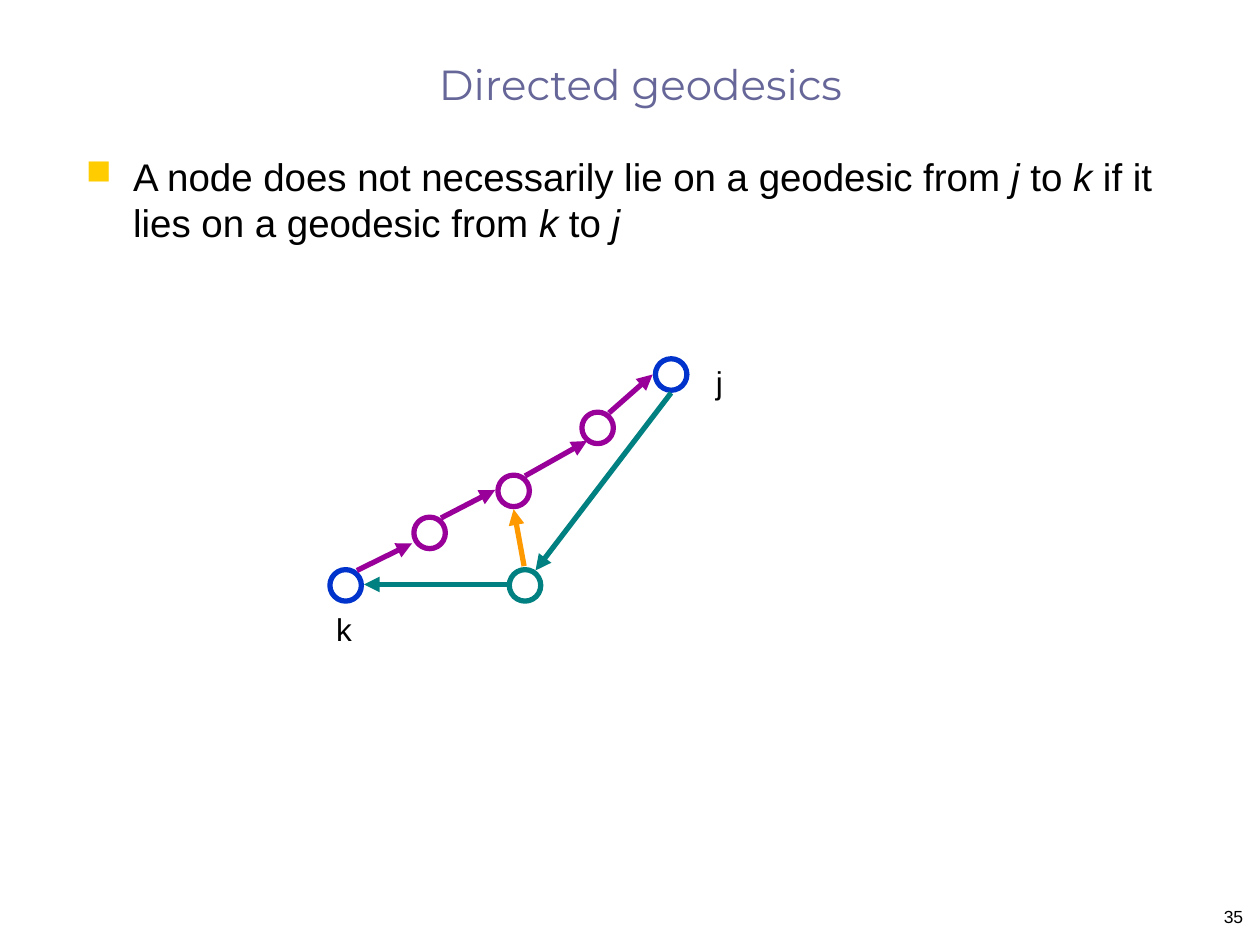
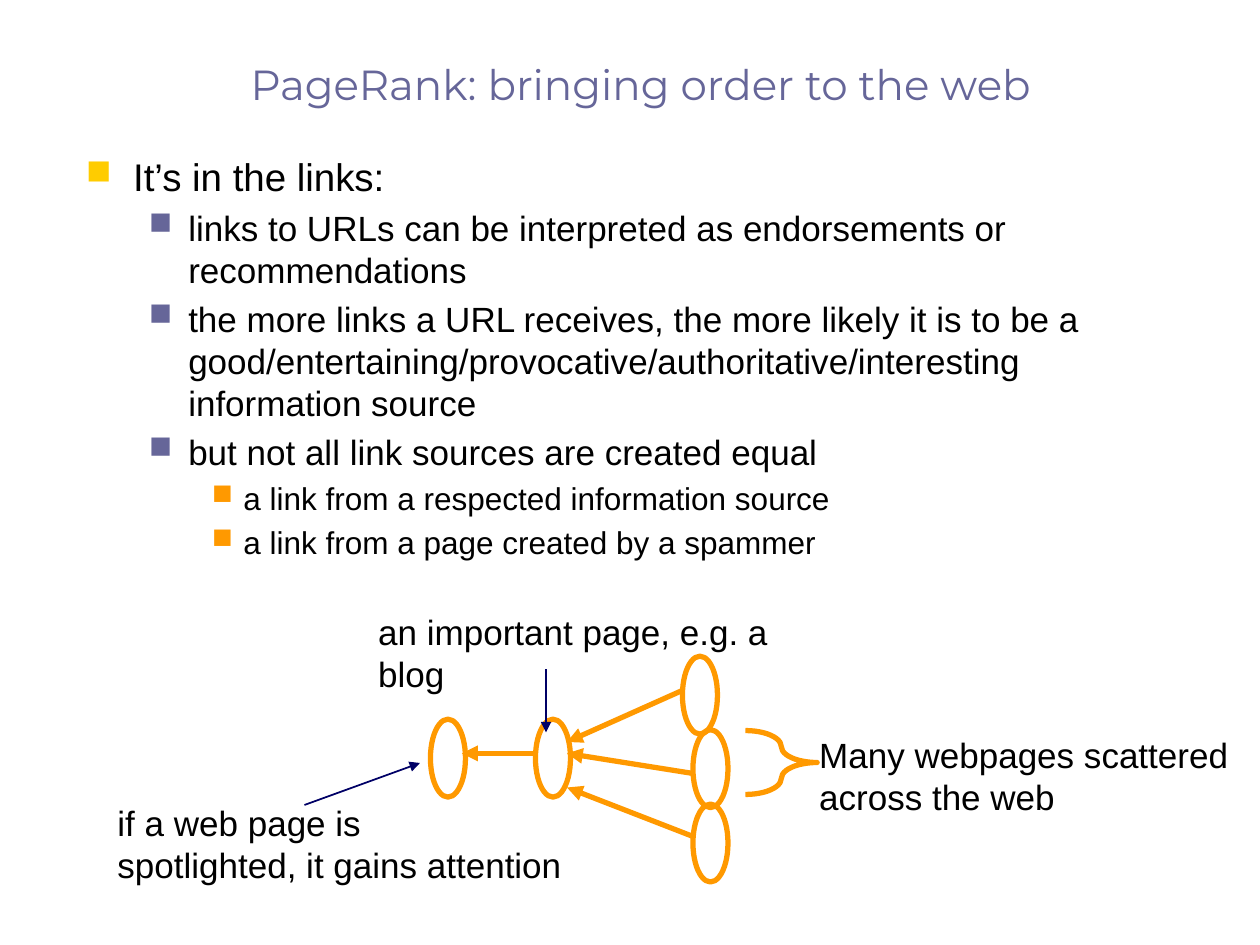
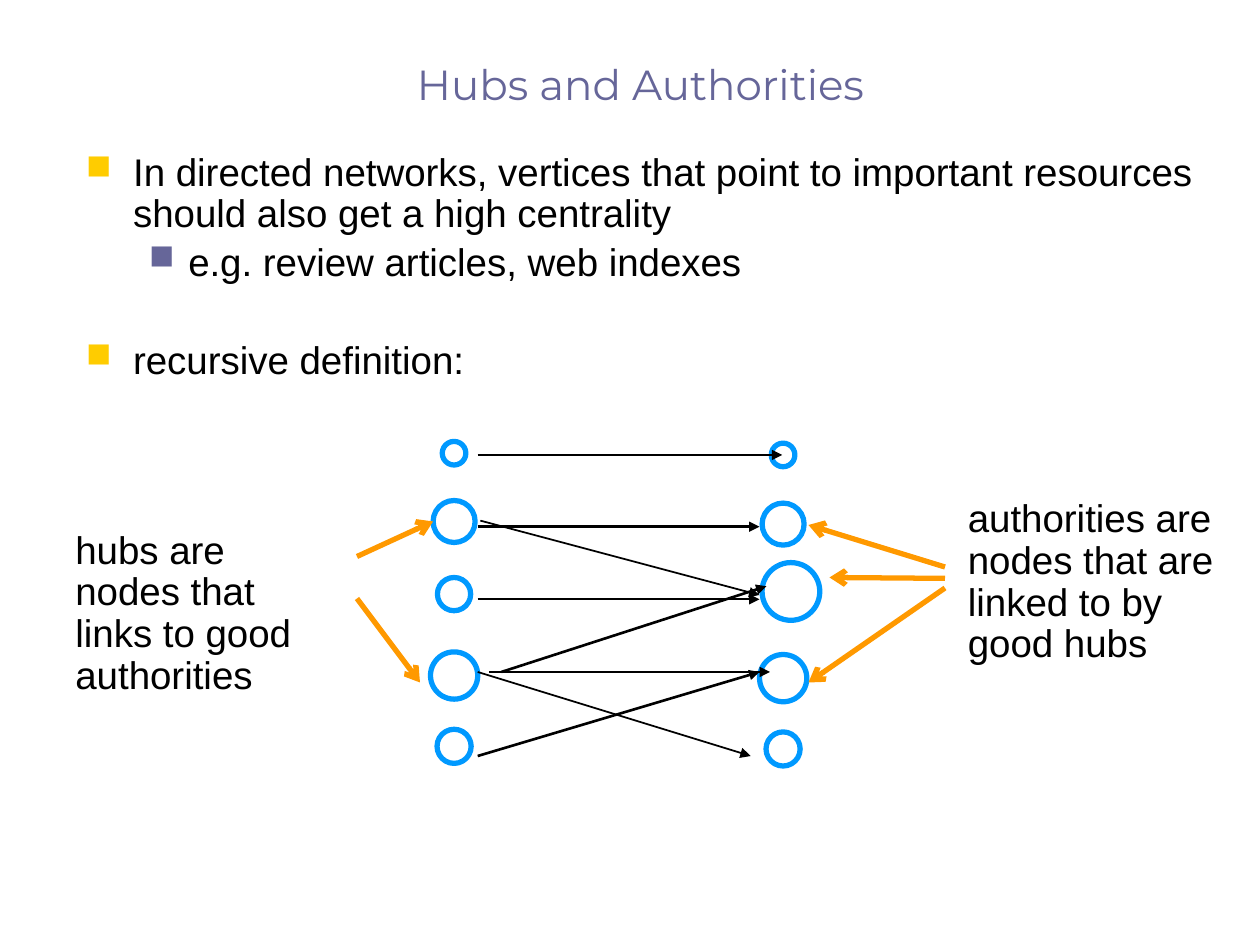
from dataclasses import dataclass

from lxml.etree import SubElement
from pptx import Presentation
from pptx.dml.color import RGBColor
from pptx.enum.shapes import MSO_CONNECTOR, MSO_SHAPE
from pptx.enum.text import MSO_ANCHOR, MSO_AUTO_SIZE, PP_ALIGN
from pptx.oxml.ns import qn
from pptx.util import Pt


@dataclass(frozen=True)
class Theme:
    black: str = "000000"
    lavender: str = "666699"
    yellow: str = "FFCC00"
    orange: str = "FF9900"
    purple: str = "990099"
    teal: str = "008080"
    blue: str = "0033CC"
    sky: str = "0099FF"
    navy: str = "000066"
    body_font: str = "Arial"
    title_font: str = "Montserrat"
    title: float = 24
    large: float = 22
    medium: float = 20
    small: float = 18
    tiny: float = 10
    thick: float = 3
    middle: float = 1.5
    thin: float = 1


THEME = Theme()
LEVELS = (
    (27, -27, THEME.yellow, THEME.large),
    (58.5, -22.5, THEME.lavender, THEME.medium),
    (90, -18, THEME.orange, THEME.small),
)


def add_bullet(paragraph, margin, indent, color):
    properties = paragraph._p.get_or_add_pPr()
    properties.set("marL", str(Pt(margin)))
    properties.set("indent", str(Pt(indent)))
    bullet_color = SubElement(properties, qn("a:buClr"))
    SubElement(bullet_color, qn("a:srgbClr"), val=color)
    SubElement(properties, qn("a:buSzPct"), val="90000")
    SubElement(properties, qn("a:buChar"), char="■")


def write(paragraph, text, size=THEME.large, color=THEME.black, font=THEME.body_font,
          align=PP_ALIGN.LEFT, before=0, spacing=None):
    paragraph.alignment = align
    paragraph.space_before = Pt(before)
    if spacing:
        paragraph.line_spacing = spacing
    for position, part in enumerate(text.split("*")):
        for row, line in enumerate(part.split("\n")):
            if row:
                paragraph.add_line_break()
            run = paragraph.add_run()
            run.text = line
            run.font.name = font
            run.font.size = Pt(size)
            run.font.italic = position % 2 == 1
            run.font.color.rgb = RGBColor.from_string(color)


class Deck:
    def __init__(self, theme):
        self.theme = theme
        self.presentation = Presentation()
        self.presentation.slide_width = Pt(720)
        self.presentation.slide_height = Pt(540)

    def new_slide(self, title):
        self.slide = self.presentation.slides.add_slide(self.presentation.slide_layouts[6])
        heading = self.frame(42, 24, 648, 41.5)
        heading.vertical_anchor = MSO_ANCHOR.BOTTOM
        write(heading.paragraphs[0], title, size=self.theme.title, color=self.theme.lavender,
              font=self.theme.title_font, align=PP_ALIGN.CENTER)

    def frame(self, left, top, width, height, wrap=True):
        frame = self.slide.shapes.add_textbox(Pt(left), Pt(top), Pt(width), Pt(height)).text_frame
        frame.word_wrap = wrap
        return frame

    def bullets(self, items, height=396, spacing=None):
        body = self.frame(42, 84, 648, height)
        for number, (level, text, changes) in enumerate(items):
            paragraph = body.add_paragraph() if number else body.paragraphs[0]
            margin, indent, color, size = LEVELS[level]
            paragraph.level = level
            add_bullet(paragraph, margin, indent, color)
            style = {"size": size, "before": 0.2 * size if number else 0, "spacing": spacing}
            write(paragraph, text, **(style | changes))

    def label(self, box, *lines, wrap=False, margin=0, **style):
        frame = self.frame(*box, wrap=wrap)
        frame.auto_size = MSO_AUTO_SIZE.SHAPE_TO_FIT_TEXT
        for number, line in enumerate(lines):
            paragraph = frame.add_paragraph() if number else frame.paragraphs[0]
            if margin:
                paragraph._p.get_or_add_pPr().set("marL", str(Pt(margin)))
            write(paragraph, line, **style)

    def page_number(self, number):
        write(self.frame(687.5, 514, 30, 24).paragraphs[0], number,
              size=self.theme.tiny, align=PP_ALIGN.RIGHT)

    def outline(self, left, top, width, height, color, kind=MSO_SHAPE.OVAL):
        shape = self.slide.shapes.add_shape(kind, Pt(left), Pt(top), Pt(width), Pt(height))
        shape.shadow.inherit = False
        shape.fill.background()
        shape.line.color.rgb = RGBColor.from_string(color)
        shape.line.width = Pt(self.theme.thick)
        return shape

    def node(self, x, y, diameter, color):
        self.outline(x - diameter / 2, y - diameter / 2, diameter, diameter, color)

    def arrow(self, x1, y1, x2, y2, color, width=THEME.thick, head="triangle"):
        link = self.slide.shapes.add_connector(
            MSO_CONNECTOR.STRAIGHT, Pt(x1), Pt(y1), Pt(x2), Pt(y2))
        link.line.color.rgb = RGBColor.from_string(color)
        link.line.width = Pt(width)
        SubElement(link.line._get_or_add_ln(), qn("a:tailEnd"), type=head)
        SubElement(link._element.spPr, qn("a:effectLst"))


def geodesics(deck):
    theme = deck.theme
    deck.new_slide("Directed geodesics")
    deck.bullets([(0, "A node does not necessarily lie on a geodesic from *j* to *k* "
                      "if it lies on a geodesic from *k* to *j*", {})], height=78)
    for x, y, color in (
        (293.5, 280.5, theme.purple), (341.5, 244.5, theme.purple),
        (245.5, 304.5, theme.purple), (300, 334.5, theme.teal),
        (197.5, 334.5, theme.blue), (383.5, 214, theme.blue),
    ):
        deck.node(x, y, 18, color)
    for ends, color in (
        ((204, 326, 235.5, 310.5), theme.purple),
        ((252, 296, 283, 280), theme.purple),
        ((300, 272, 335.5, 252), theme.purple),
        ((348, 236, 373, 214), theme.purple),
        ((299.5, 323.5, 293.5, 291), theme.orange),
        ((383.5, 224.5, 306, 326), theme.teal),
        ((289.5, 334, 208, 334), theme.teal),
    ):
        deck.arrow(*ends, color)
    deck.label((185, 345, 24, 29), "k", size=theme.small)
    deck.label((402, 204, 19, 29), "j", size=theme.small)
    deck.page_number("35")


def pagerank(deck):
    theme = deck.theme
    deck.new_slide("PageRank: bringing order to the web")
    deck.bullets([
        (0, "It’s in the links:", {}),
        (1, "links to URLs can be interpreted as endorsements or recommendations", {}),
        (1, "the more links a URL receives, the more likely it is to be a "
            "good/entertaining/provocative/authoritative/interesting information source", {}),
        (1, "but not all link sources are created equal", {}),
        (2, "a link from a respected information source", {}),
        (2, "a link from a page created by a spammer", {}),
    ])
    for left, top in ((306, 411), (396, 459.5), (390, 375), (396, 417), (246, 411)):
        deck.outline(left, top, 20, 44.5, theme.orange)
    for ends in ((306, 430.5, 264, 430.5), (390, 394.5, 324, 424),
                 (396, 442, 324, 430.5), (396, 478, 324, 450)):
        deck.arrow(*ends, theme.orange)
    brace = deck.outline(426, 417.5, 41, 36.5, theme.orange, MSO_SHAPE.RIGHT_BRACE)
    brace.adjustments[0] = 0.3
    for ends in ((312, 382.5, 312, 418.5), (174, 460, 240, 436)):
        deck.arrow(*ends, theme.navy, theme.thin)
    deck.label((461, 415.5, 250, 55.5), "Many webpages scattered", "across the web",
               size=theme.medium)
    deck.label((209, 345.5, 278, 31.5), "an important page, e.g. a blog", size=theme.medium)
    deck.label((60, 454.5, 276, 55.5), "if a web page is\nspotlighted, it gains attention",
               size=theme.medium)


def hubs_and_authorities(deck):
    theme = deck.theme
    deck.new_slide("Hubs and Authorities")
    deck.bullets([
        (0, "In directed networks, vertices that point to important resources "
            "should also get a high centrality", {}),
        (1, "e.g. review articles, web indexes", {"size": theme.large}),
        (0, "recursive definition:", {"before": 32}),
    ], spacing=0.9)
    hubs = ((259, 13.5), (298, 24), (339.5, 19), (386, 27), (426.5, 19.5))
    for y, diameter in hubs:
        deck.node(259.5, y, diameter, theme.sky)
    authorities = ((447.5, 260, 13.5), (447.5, 299.5, 24), (452, 338, 33),
                   (447.5, 387.5, 27), (447.5, 428, 19.5))
    for authority in authorities:
        deck.node(*authority, theme.sky)
    for ends, width in (
        ((273, 260, 447, 260), theme.middle),
        ((273, 301, 434, 301), theme.middle),
        ((286.5, 384, 438, 335), theme.middle),
        ((279.5, 384, 440, 384), theme.middle),
        ((273, 432, 434, 384), theme.middle),
        ((274.5, 297.5, 434, 340), theme.thin),
        ((273, 342.5, 434, 342.5), theme.thin),
        ((273, 384, 429, 432), theme.thin),
    ):
        deck.arrow(*ends, theme.black, width)
    for ends in ((204, 318, 247.5, 298), (204, 342, 240, 390), (540, 330.5, 474, 330),
                 (540, 324, 462, 300), (540, 336, 462, 390)):
        deck.arrow(*ends, theme.orange, head="arrow")
    for box, text in (
        ((0, 300, 198, 103), "hubs are nodes that links to good authorities"),
        ((510, 282, 210, 103), "authorities are nodes that are linked to by good hubs"),
    ):
        deck.label(box, text, wrap=True, margin=36, spacing=0.9)


def main():
    deck = Deck(THEME)
    geodesics(deck)
    pagerank(deck)
    hubs_and_authorities(deck)
    deck.presentation.save("out.pptx")


if __name__ == "__main__":
    main()
